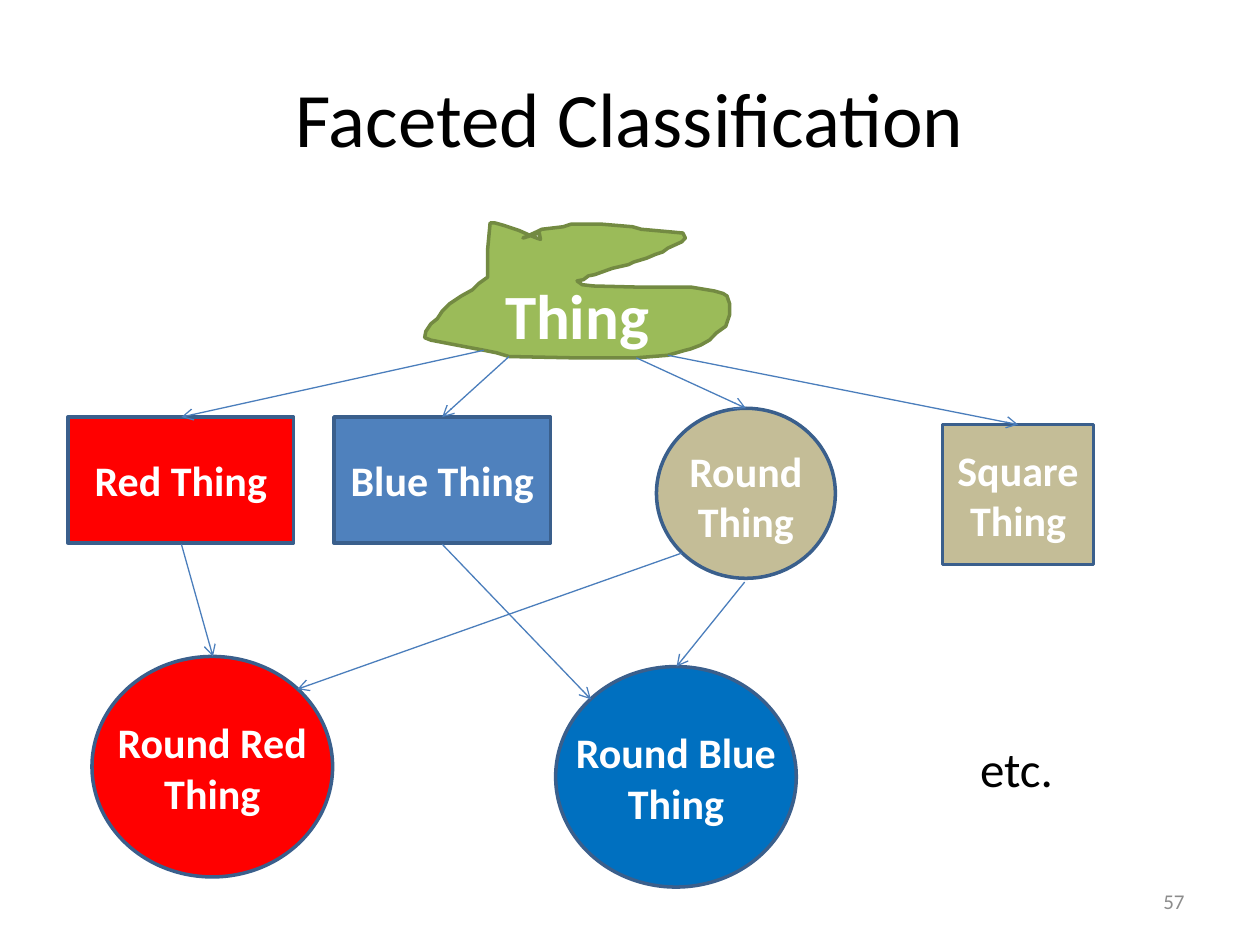
from dataclasses import dataclass

from lxml import etree
from pptx import Presentation
from pptx import util as u
from pptx.dml.color import RGBColor
from pptx.enum import shapes, text
from pptx.oxml.ns import qn

PX = 9144  # EMU per px: 100 px to the inch
LEFT, MID, RIGHT = text.PP_ALIGN.LEFT, text.PP_ALIGN.CENTER, text.PP_ALIGN.RIGHT
TOP, CORE, BASE = (text.MSO_ANCHOR.TOP, text.MSO_ANCHOR.MIDDLE,
                   text.MSO_ANCHOR.BOTTOM)


@dataclass(frozen=True)
class Theme:
    font: str = "Calibri"
    black: str = "000000"
    white: str = "FFFFFF"
    gray: str = "8C8C8C"
    red: str = "FF0000"
    blue: str = "4F81BD"
    deep: str = "0070C0"
    tan: str = "C4BD97"
    green: str = "9BBB59"
    edge: str = "3A5F8C"
    moss: str = "738A42"
    link: str = "4B7EBC"
    title: int = 44
    root: int = 36
    note: int = 28
    node: int = 24
    foot: int = 12
    rim: float = 2
    thin: float = 0.75


def color(code):
    return RGBColor.from_string(code)


def write(shape, words, size, ink, bold=False, align=MID, anchor=CORE, wrap=True):
    frame = shape.text_frame
    frame.word_wrap = wrap
    frame.vertical_anchor = anchor
    par = frame.paragraphs[0]
    par.alignment = align
    run = par.add_run()
    run.text = words
    font = run.font
    font.name, font.size, font.bold = Theme.font, u.Pt(size), bold
    font.color.rgb = color(ink)


class Board:
    def __init__(self, slide, theme):
        self.slide, self.theme = slide, theme

    def paint(self, shape, fill, edge):
        shape.shadow.inherit = False
        shape.fill.solid()
        shape.fill.fore_color.rgb = color(fill)
        shape.line.color.rgb = color(edge)
        shape.line.width = u.Pt(self.theme.rim)

    def label(self, box, words, size, ink, **form):
        area = self.slide.shapes.add_textbox(*(n * PX for n in box))
        write(area, words, size, ink, **form)

    def shape(self, kind, box, fill):
        item = self.slide.shapes.add_shape(kind, *(n * PX for n in box))
        self.paint(item, fill, self.theme.edge)
        return item

    def block(self, box, words, fill):
        item = self.shape(shapes.MSO_SHAPE.RECTANGLE, box, fill)
        write(item, words, self.theme.node, self.theme.white, bold=True)

    def disc(self, box, words, fill, area):
        """Draw an ellipse with a label area wider than its own text zone."""
        self.shape(shapes.MSO_SHAPE.OVAL, box, fill)
        self.label(area, words, self.theme.node, self.theme.white, bold=True)

    def patch(self, points, words):
        """Draw the irregular root shape."""
        pen = self.slide.shapes.build_freeform(*points[0], scale=PX)
        pen.add_line_segments(points[1:], close=True)
        item = pen.convert_to_shape()
        self.paint(item, self.theme.green, self.theme.moss)
        write(item, words, self.theme.root, self.theme.white, bold=True, anchor=BASE)

    def arrow(self, start, end):
        line = self.slide.shapes.add_connector(
            shapes.MSO_CONNECTOR.STRAIGHT, *(n * PX for n in start + end))
        line.line.color.rgb = color(self.theme.link)
        line.line.width = u.Pt(self.theme.thin)
        props = line._element.spPr
        etree.SubElement(props.find(qn("a:ln")), qn("a:tailEnd"), type="arrow")
        etree.SubElement(props, qn("a:effectLst"))


OUTLINE = [
    (415, 189), (426, 184), (430, 182), (447, 180), (453, 178), (478, 178),
    (502, 180), (509, 182), (531, 184), (542, 185), (544, 189), (541, 192),
    (530, 197), (526, 200), (520, 202), (513, 205), (503, 208), (499, 210),
    (486, 213), (472, 218), (467, 219), (463, 222), (458, 223), (462, 226),
    (471, 227), (510, 228), (549, 228), (555, 229), (567, 231), (574, 233),
    (577, 235), (579, 241), (579, 250), (576, 259), (569, 264), (563, 270),
    (556, 274), (548, 277), (544, 278), (530, 282), (505, 284), (454, 284),
    (404, 283), (394, 280), (384, 278), (368, 275), (342, 270), (337, 268),
    (338, 263), (342, 257), (347, 253), (351, 247), (357, 241), (366, 235),
    (375, 230), (380, 225), (387, 220), (387, 198), (389, 177), (393, 177),
    (400, 179), (412, 183), (421, 187), (426, 189), (429, 190), (428, 185),
]

LINKS = [
    ((384, 278), (144, 331)),
    ((404, 283), (351, 331)),
    ((505, 284), (592, 324)),
    ((530, 282), (808, 337)),
    ((144, 432), (169, 521)),
    ((351, 432), (469, 555)),
    ((541, 439), (236, 547)),
    ((591, 462), (537, 529)),
]


def main():
    deck = Presentation()
    deck.slide_width, deck.slide_height = 1000 * PX, 750 * PX
    look = Theme()
    board = Board(deck.slides.add_slide(deck.slide_layouts[6]), look)

    board.label((50, 30, 900, 125), "Faceted Classification", look.title, look.black)
    board.patch(OUTLINE, "Thing")

    board.block((54, 331, 179, 100), "Red Thing", look.red)
    board.block((265, 331, 172, 100), "Blue Thing", look.blue)
    board.disc((521, 324, 142, 135), "Round Thing", look.tan, (505, 324, 174, 139))
    board.block((748, 337, 120, 111), "Square Thing", look.tan)

    for left, top, words, fill in ((73, 521, "Round Red Thing", look.red),
                                   (441, 529, "Round Blue Thing", look.deep)):
        board.disc((left, top, 191, 175), words, fill, (left, top + 10, 191, 156))

    for start, end in LINKS:
        board.arrow(start, end)

    board.label((768, 581, 79, 57), "etc.", look.note, look.black,
                align=LEFT, anchor=TOP, wrap=False)
    board.label((717, 695, 233, 40), "57", look.foot, look.gray, align=RIGHT)
    deck.save("out.pptx")


if __name__ == "__main__":
    main()
